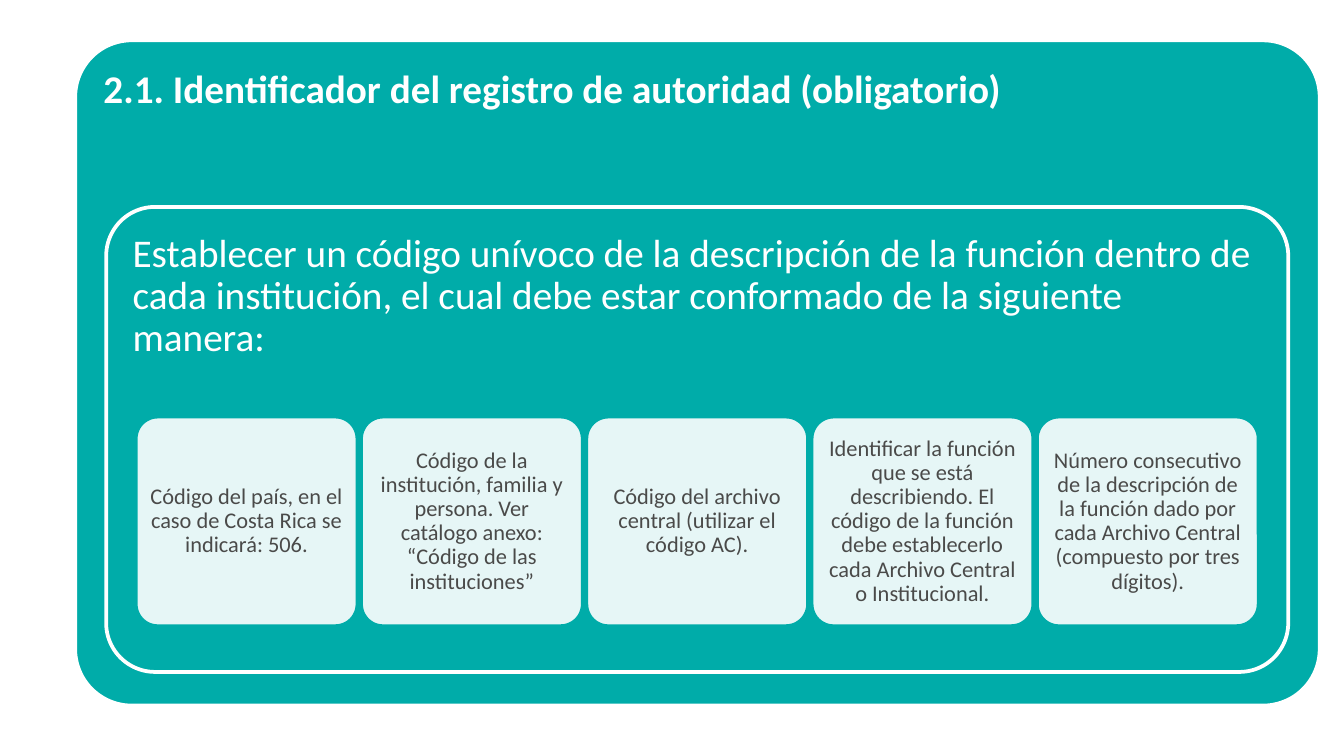
from lxml.etree import SubElement
from pptx import Presentation
from pptx.dml.color import RGBColor
from pptx.enum.shapes import MSO_SHAPE as Shape
from pptx.enum.text import MSO_ANCHOR as Anchor, MSO_AUTO_SIZE as AutoSize, PP_ALIGN as Align
from pptx.oxml.ns import qn
from pptx.util import Emu, Pt

EMU_PER_PX = 4572
COLORS = {"teal": "00ACA9", "white": "FFFFFF", "gray": "4A4A49"}
HEADING = "2.1. Identificador del registro de autoridad (obligatorio)"
INSTRUCTION = (
    "Establecer un código unívoco de la descripción de la función dentro de cada "
    "institución, el cual debe estar conformado de la siguiente manera:"
)
CODE_PARTS = [
    "Código del país, en el caso de Costa Rica se indicará: 506.",
    "Código de la institución, familia y persona. Ver catálogo anexo: "
    "“Código de las instituciones”",
    "Código del archivo central (utilizar el código AC).",
    "Identificar la función que se está describiendo. El código de la función "
    "debe establecerlo cada Archivo Central o Institucional.",
    "Número consecutivo de la descripción de la función dado por cada Archivo "
    "Central (compuesto por tres dígitos).",
]


def px(length):
    """Turn a length in px into EMU."""
    return Emu(round(length * EMU_PER_PX))


def color(name):
    """Return the named colour."""
    return RGBColor.from_string(COLORS[name])


def write(shape, text, size=21, ink="white", bold=False, align=Align.LEFT,
          anchor=Anchor.TOP, inset=18):
    """Put one formatted paragraph into a shape."""
    frame = shape.text_frame
    frame.word_wrap = True
    frame.auto_size = AutoSize.NONE
    frame.vertical_anchor = anchor
    frame.margin_left = frame.margin_right = px(inset)
    frame.margin_top = frame.margin_bottom = px(inset)
    frame.text = text
    paragraph = frame.paragraphs[0]
    paragraph.alignment = align
    paragraph.line_spacing = 0.9
    paragraph.space_before = Pt(0)
    font = paragraph.runs[0].font
    font.name, font.size, font.bold = "Calibri", Pt(size), bold
    font.color.rgb = color(ink)


def add_panel(slide, box, rounding, fill="teal", outline="white", opacity=100):
    """Draw a rounded panel in the given box."""
    panel = slide.shapes.add_shape(Shape.ROUNDED_RECTANGLE, *map(px, box))
    panel.adjustments[0] = rounding
    panel.shadow.inherit = False
    panel.fill.solid()
    panel.fill.fore_color.rgb = color(fill)
    if opacity < 100:
        swatch = panel.fill._xPr.find(qn("a:solidFill"))[0]
        SubElement(swatch, qn("a:alpha"), val=str(opacity * 1000))
    panel.line.color.rgb = color(outline)
    panel.line.width = Pt(2)
    return panel


def add_heading_panel(slide, box):
    """Draw the outer panel with the slide title at its top."""
    left, top, width, _ = box
    add_panel(slide, box, 0.085)
    title = slide.shapes.title
    title.left, title.top = px(left + 24), px(top + 25)
    title.width, title.height = px(width - 50), px(172)
    write(title, HEADING, bold=True)
    slide.shapes._spTree.append(title._element)


def add_code_cards(slide, box, card_width):
    """Spread the parts of the code evenly across the box as cards."""
    left, top, width, height = box
    pitch = (width - card_width) / (len(CODE_PARTS) - 1)
    for index, part in enumerate(CODE_PARTS):
        card = add_panel(slide, (left + index * pitch, top, card_width, height), 0.105,
                         fill="white", outline="teal", opacity=90)
        write(card, part, size=12, ink="gray", align=Align.CENTER,
              anchor=Anchor.MIDDLE, inset=10)


def add_instruction_panel(slide, box):
    """Draw the inner panel with its instruction and code cards."""
    left, top, width, _ = box
    write(add_panel(slide, box, 0.105), INSTRUCTION)
    add_code_cards(slide, (left + 44, top + 312, width - 88, 312), 330)


def main():
    """Build and save the slide."""
    deck = Presentation()
    deck.slide_width, deck.slide_height = px(2000), px(1125)
    slide = deck.slides.add_slide(deck.slide_layouts[5])
    add_heading_panel(slide, (112, 60, 1852, 990))
    add_instruction_panel(slide, (158, 308, 1759, 692))
    deck.save("out.pptx")


if __name__ == "__main__":
    main()
